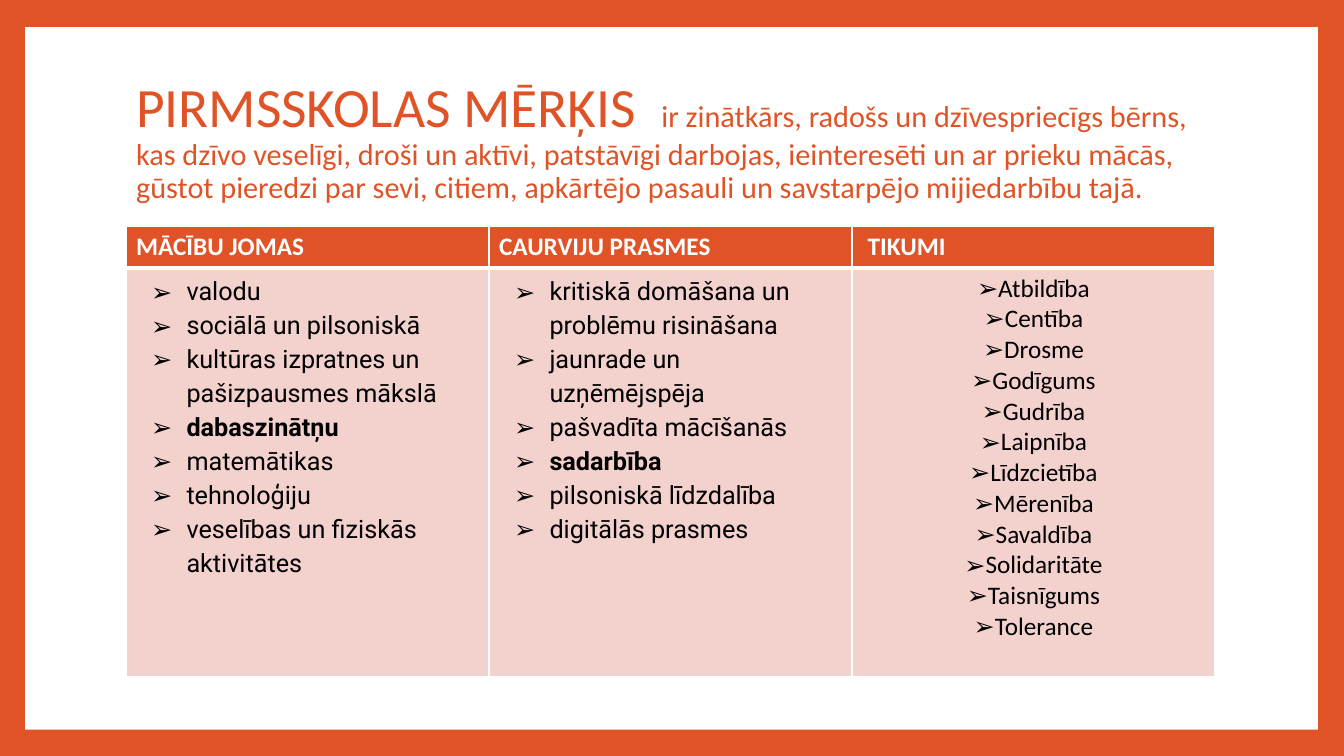
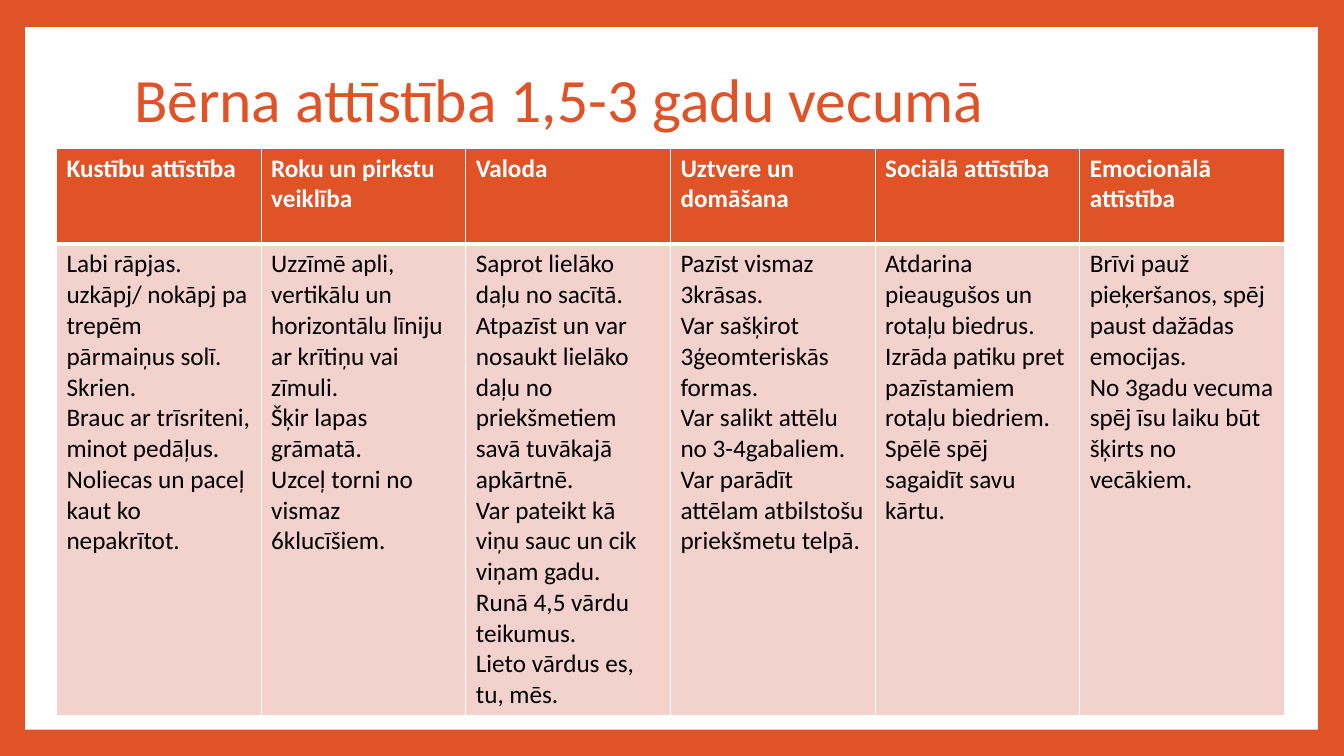
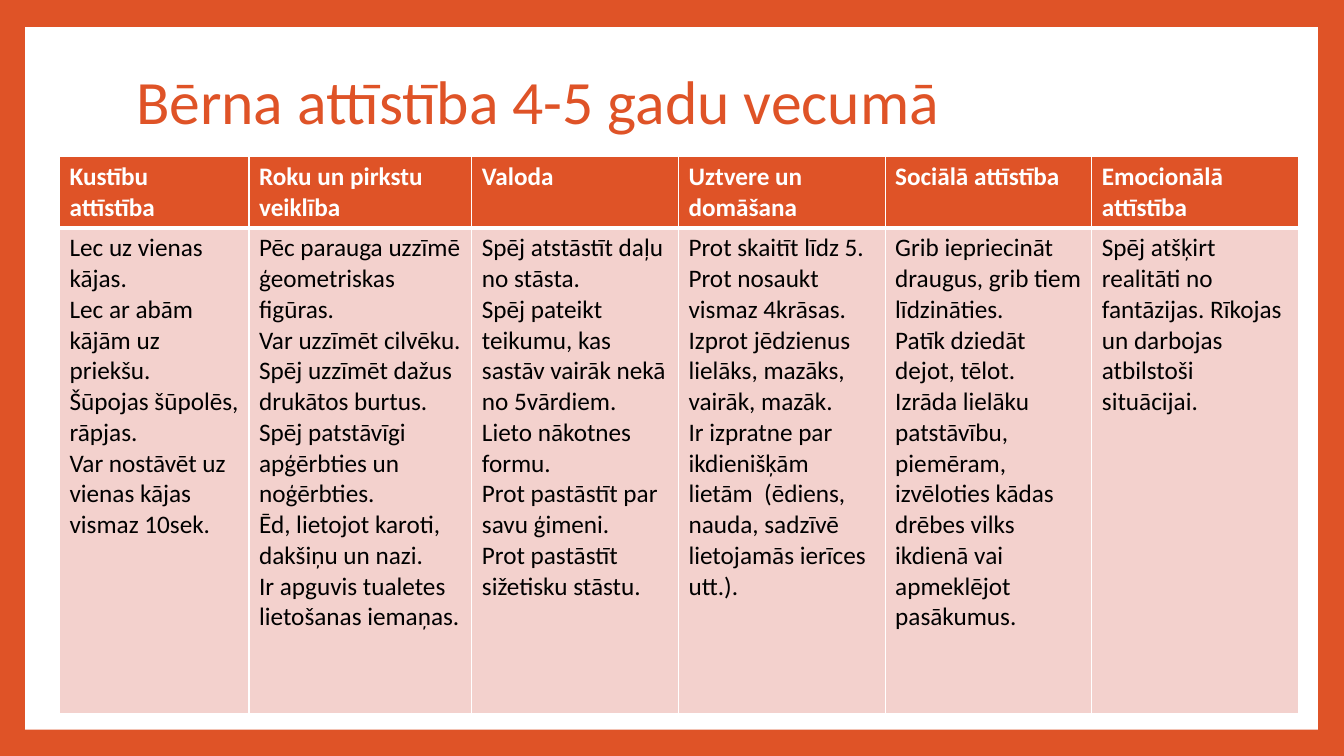
from dataclasses import dataclass

from lxml.etree import SubElement
from pptx import Presentation
from pptx.dml.color import RGBColor
from pptx.enum.shapes import MSO_SHAPE as Shape
from pptx.enum.text import MSO_ANCHOR as Anchor, MSO_AUTO_SIZE as AutoSize, PP_ALIGN as Align
from pptx.oxml.ns import qn
from pptx.util import Inches, Pt


@dataclass(frozen=True)
class Theme:
    accent: RGBColor = RGBColor.from_string("DF5327")
    tint: RGBColor = RGBColor.from_string("F3D1CD")
    paper: RGBColor = RGBColor.from_string("FFFFFF")
    ink: RGBColor = RGBColor.from_string("000000")
    font: str = "Calibri"
    list_font: str = "Roboto"
    title_size: float = 44
    goal_size: float = 39.6
    goal_text_size: float = 21.6
    table_size: float = 18
    thin_line: float = 1
    thick_line: float = 3


@dataclass(frozen=True)
class TextStyle:
    font: str = Theme.font
    align: Align = Align.LEFT
    line_spacing: float = 1.0
    bullet: str = ""
    margin: float = 0
    indent: float = 0


THEME = Theme()
PLAIN = TextStyle()
HANGING = TextStyle(THEME.list_font, line_spacing=1.15, bullet="➢", margin=0.5, indent=-0.35)
CENTERED = TextStyle(align=Align.CENTER, bullet="➢")

GOAL = (
    ("PIRMSSKOLAS MĒRĶIS  ", THEME.goal_size),
    (
        "ir zinātkārs, radošs un dzīvespriecīgs bērns, kas dzīvo veselīgi, droši un aktīvi, "
        "patstāvīgi darbojas, ieinteresēti un ar prieku mācās, gūstot pieredzi par sevi, citiem, "
        "apkārtējo pasauli un savstarpējo mijiedarbību tajā.",
        THEME.goal_text_size,
    ),
)
GOAL_HEADINGS = ("MĀCĪBU JOMAS", "CAURVIJU PRASMES", " TIKUMI")
GOAL_COLUMNS = (
    (
        "valodu",
        "sociālā un pilsoniskā",
        "kultūras izpratnes un pašizpausmes mākslā",
        "dabaszinātņu",
        "matemātikas",
        "tehnoloģiju",
        "veselības un fiziskās aktivitātes",
    ),
    (
        "kritiskā domāšana un problēmu risināšana",
        "jaunrade un uzņēmējspēja",
        "pašvadīta mācīšanās",
        "sadarbība",
        "pilsoniskā līdzdalība",
        "digitālās prasmes",
    ),
    (
        "Atbildība", "Centība", "Drosme", "Godīgums", "Gudrība", "Laipnība",
        "Līdzcietība", "Mērenība", "Savaldība", "Solidaritāte", "Taisnīgums", "Tolerance",
    ),
)
EMPHASIZED = {"dabaszinātņu", "sadarbība"}

SKILL_HEADINGS = (
    "Kustību attīstība",
    "Roku un pirkstu veiklība",
    "Valoda",
    "Uztvere un domāšana",
    "Sociālā attīstība",
    "Emocionālā attīstība",
)
TODDLER_COLUMNS = (
    (
        "Labi rāpjas.",
        "uzkāpj/ nokāpj pa trepēm pārmaiņus solī.",
        "Skrien.",
        "Brauc ar trīsriteni, minot pedāļus.",
        "Noliecas un paceļ kaut ko nepakrītot.",
    ),
    (
        "Uzzīmē apli, vertikālu un horizontālu līniju ar krītiņu vai zīmuli.",
        "Šķir lapas grāmatā.",
        "Uzceļ torni no vismaz 6klucīšiem.",
    ),
    (
        "Saprot lielāko daļu no sacītā.",
        "Atpazīst un var nosaukt lielāko daļu no priekšmetiem savā tuvākajā apkārtnē.",
        "Var pateikt kā viņu sauc un cik viņam gadu.",
        "Runā 4,5 vārdu teikumus.",
        "Lieto vārdus es, tu, mēs.",
    ),
    (
        "Pazīst vismaz 3krāsas.",
        "Var sašķirot 3ģeomteriskās formas.",
        "Var salikt attēlu no 3-4gabaliem.",
        "Var parādīt attēlam atbilstošu priekšmetu telpā.",
    ),
    (
        "Atdarina pieaugušos un rotaļu biedrus.",
        "Izrāda patiku pret pazīstamiem rotaļu biedriem.",
        "Spēlē spēj sagaidīt savu kārtu.",
    ),
    (
        "Brīvi pauž pieķeršanos, spēj paust dažādas emocijas.",
        "No 3gadu vecuma spēj īsu laiku būt šķirts no vecākiem.",
    ),
)
PRESCHOOLER_COLUMNS = (
    (
        "Lec uz vienas kājas.",
        "Lec ar abām kājām uz priekšu.",
        "Šūpojas šūpolēs, rāpjas.",
        "Var nostāvēt uz vienas kājas vismaz 10sek.",
    ),
    (
        "Pēc parauga uzzīmē ģeometriskas figūras.",
        "Var uzzīmēt cilvēku.",
        "Spēj uzzīmēt dažus drukātos burtus.",
        "Spēj patstāvīgi apģērbties un noģērbties.",
        "Ēd, lietojot karoti, dakšiņu un nazi.",
        "Ir apguvis tualetes lietošanas iemaņas.",
    ),
    (
        "Spēj atstāstīt daļu no stāsta.",
        "Spēj pateikt teikumu, kas sastāv vairāk nekā no 5vārdiem.",
        "Lieto nākotnes formu.",
        "Prot pastāstīt par savu ģimeni.",
        "Prot pastāstīt sižetisku stāstu.",
    ),
    (
        "Prot skaitīt līdz 5.",
        "Prot nosaukt vismaz 4krāsas.",
        "Izprot jēdzienus lielāks, mazāks, vairāk, mazāk.",
        "Ir izpratne par ikdienišķām lietām  (ēdiens, nauda, sadzīvē lietojamās ierīces utt.).",
    ),
    (
        "Grib iepriecināt draugus, grib tiem līdzināties.",
        "Patīk dziedāt dejot, tēlot.",
        "Izrāda lielāku patstāvību, piemēram, izvēloties kādas drēbes vilks ikdienā "
        "vai apmeklējot pasākumus.",
    ),
    ("Spēj atšķirt realitāti no fantāzijas. Rīkojas un darbojas atbilstoši situācijai.",),
)


def set_font(font, color, name=THEME.font, size=None, bold=False):
    font.name = name
    font.bold = bold
    font.color.rgb = color
    if size:
        font.size = Pt(size)


def add_frame(slide, box):
    layout = slide.slide_layout
    background = layout.background.fill
    background.solid()
    background.fore_color.rgb = THEME.accent
    frame = slide.shapes.add_shape(Shape.RECTANGLE, *map(Inches, box))
    frame.shadow.inherit = False
    frame.fill.solid()
    frame.fill.fore_color.rgb = THEME.paper
    frame.line.fill.background()
    layout.shapes.element.insert(2, frame.element)


def place_title(slide, box, runs):
    title = slide.shapes.title
    title.left, title.top, title.width, title.height = map(Inches, box)
    text_frame = title.text_frame
    text_frame.word_wrap = True
    text_frame.auto_size = AutoSize.NONE
    text_frame.vertical_anchor = Anchor.MIDDLE
    paragraph = text_frame.paragraphs[0]
    paragraph.alignment = Align.LEFT
    paragraph.line_spacing = 0.9
    set_font(paragraph.font, THEME.accent)
    for text, size in runs:
        run = paragraph.add_run()
        run.text = text
        run.font.size = Pt(size)


def set_borders(cell, top, bottom):
    properties = cell._tc.get_or_add_tcPr()
    widths = {"L": THEME.thin_line, "R": THEME.thin_line, "T": top, "B": bottom}
    for side, width in widths.items():
        line = SubElement(properties, qn(f"a:ln{side}"), w=str(Pt(width)))
        fill = SubElement(line, qn("a:solidFill"))
        SubElement(fill, qn("a:srgbClr"), val=str(THEME.paper))


def set_bullet(paragraph, style):
    properties = paragraph._p.get_or_add_pPr()
    properties.set("marL", str(Inches(style.margin)))
    properties.set("indent", str(Inches(style.indent)))
    SubElement(properties, qn("a:buFont"), typeface="Arial")
    SubElement(properties, qn("a:buChar"), char=style.bullet)


def fill_cell(cell, lines, style, fill, color, bold_lines):
    cell.fill.solid()
    cell.fill.fore_color.rgb = fill
    text_frame = cell.text_frame
    text_frame.text = "\n".join(lines)
    for line, paragraph in zip(lines, text_frame.paragraphs):
        paragraph.alignment = style.align
        paragraph.line_spacing = style.line_spacing
        if style.bullet:
            set_bullet(paragraph, style)
        set_font(paragraph.font, color, style.font, THEME.table_size, line in bold_lines)


def add_column_table(slide, box, row_heights, headings, columns, styles, column_widths=None):
    left, top, width, height = map(Inches, box)
    table = slide.shapes.add_table(2, len(headings), left, top, width, height).table
    for row, row_height in zip(table.rows, row_heights):
        row.height = Inches(row_height)
    widths = column_widths or [box[2] / len(headings)] * len(headings)
    for index, (heading, lines, style) in enumerate(zip(headings, columns, styles)):
        table.columns[index].width = Inches(widths[index])
        header, body = table.cell(0, index), table.cell(1, index)
        set_borders(header, THEME.thin_line, THEME.thick_line)
        set_borders(body, THEME.thick_line, THEME.thin_line)
        fill_cell(header, (heading,), PLAIN, THEME.accent, THEME.paper, {heading})
        fill_cell(body, lines, style, THEME.tint, THEME.ink, EMPHASIZED)


def build_goal_slide(slide):
    place_title(slide, (1.25, 0.67, 10.8, 1.48), GOAL)
    add_column_table(
        slide, (1.25, 2.25, 10.8, 4.46), (0.41, 4.05),
        GOAL_HEADINGS, GOAL_COLUMNS, (HANGING, HANGING, CENTERED),
    )


def build_skill_slide(slide, title, title_box, table_box, row_heights, columns, column_widths=None):
    place_title(slide, title_box, ((title, THEME.title_size),))
    styles = [PLAIN] * len(columns)
    add_column_table(
        slide, table_box, row_heights, SKILL_HEADINGS, columns, styles, column_widths
    )


def main():
    presentation = Presentation()
    presentation.slide_width = Inches(13.33)
    presentation.slide_height = Inches(7.5)
    layout = presentation.slide_layouts[5]
    goal, toddler, preschooler = (presentation.slides.add_slide(layout) for _ in range(3))
    add_frame(goal, (0.25, 0.27, 12.82, 6.97))
    build_goal_slide(goal)
    build_skill_slide(
        toddler, "Bērna attīstība 1,5-3 gadu vecumā", (1.23, 0.42, 10.8, 1.19),
        (0.56, 1.47, 12.18, 5.61), (0.95, 4.66), TODDLER_COLUMNS,
    )
    build_skill_slide(
        preschooler, "Bērna attīstība 4-5 gadu vecumā", (1.25, 0.47, 10.8, 1.14),
        (0.59, 1.55, 12.29, 5.51), (0.69, 4.82), PRESCHOOLER_COLUMNS,
        (1.88, 2.21, 2.05, 2.05, 2.05, 2.05),
    )
    presentation.save("out.pptx")


if __name__ == "__main__":
    main()
